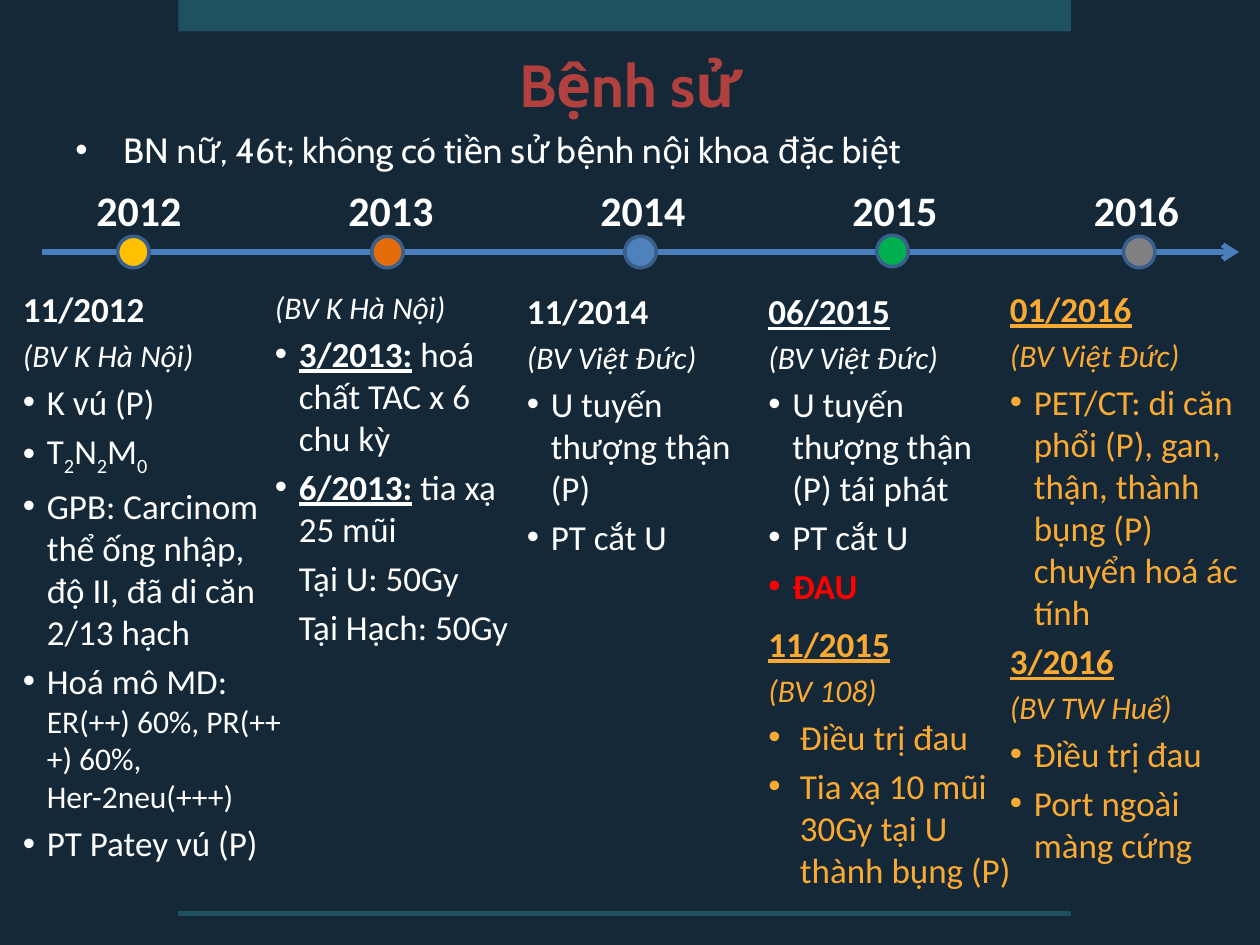
from dataclasses import dataclass

from lxml import etree
from pptx import Presentation
from pptx.dml.color import RGBColor
from pptx.enum.shapes import MSO_CONNECTOR, MSO_SHAPE
from pptx.enum.text import MSO_ANCHOR, PP_ALIGN
from pptx.oxml.ns import qn
from pptx.util import Inches, Pt

RECT, OVAL = MSO_SHAPE.RECTANGLE, MSO_SHAPE.OVAL
STRAIGHT = MSO_CONNECTOR.STRAIGHT
LEFT, CENTER = PP_ALIGN.LEFT, PP_ALIGN.CENTER
TOP, MIDDLE = MSO_ANCHOR.TOP, MSO_ANCHOR.MIDDLE

# The slide is a grid of 120 columns by 90 rows
COLUMNS, ROWS = 120, 90
SLIDE_W, SLIDE_H = Inches(10), Inches(7.5)

NAVY, TEAL, AXIS, RING = "142837", "1E5260", "4B7EBC", "3A5F8C"
WHITE, AMBER, RED, BRICK = "FFFFFF", "FAAA32", "FF0000", "B0413E"
BODY_FONT, HEAD_FONT = "Calibri", "Cabin"
HANG = 0.19


@dataclass(frozen=True)
class Run:
    text: str
    size: float = 20
    bold: bool = False
    italic: bool = False
    underline: bool = False
    color: str = ""
    subscript: bool = False


@dataclass(frozen=True)
class Para:
    runs: tuple[Run, ...]
    indent: float = 0
    bullet: bool = False


@dataclass(frozen=True)
class Box:
    left: float
    top: float
    width: float
    height: float


@dataclass(frozen=True)
class Year:
    label: str
    label_left: float
    dot_left: float
    dot_top: float
    color: str


@dataclass(frozen=True)
class Event:
    box: Box
    paras: tuple[Para, ...]
    color: str = WHITE


def date(text: str, underline: bool = True) -> Para:
    return Para((Run(text, bold=True, underline=underline),))


def hospital(name: str) -> Para:
    return Para((Run(f"({name})", size=18, italic=True),))


def item(*parts: str | Run, indent: float = HANG, bullet: bool = True) -> Para:
    runs = tuple(Run(p) if isinstance(p, str) else p for p in parts)
    return Para(runs, indent, bullet)


def due(text: str) -> Run:
    return Run(text, bold=True, underline=True)


def sub(text: str) -> Run:
    return Run(text, subscript=True)


YEARS = (
    Year("2012", 8, 11.2, 22.5, "FFC000"),
    Year("2013", 32, 35.4, 22.5, "E46C0A"),
    Year("2014", 56, 59.5, 22.5, "4F81BD"),
    Year("2015", 80, 83.5, 22.4, "00B050"),
    Year("2016", 103, 107, 22.5, "808080"),
)

EVENTS = (
    Event(Box(1, 26.8, 27, 68.3), (
        date("11/2012", underline=False),
        hospital("BV K Hà Nội"),
        item("K vú (P)"),
        item("T", sub("2"), "N", sub("2"), "M", sub("0")),
        item("GPB: Carcinom thể ống nhập, độ II, đã di căn 2/13 hạch"),
        item("Hoá mô MD: ", Run("ER(++) 60%, PR(+++) 60%, Her-2neu(+++)", size=18)),
        item("PT Patey vú (P)"),
    )),
    Event(Box(25, 26.8, 26, 68.3), (
        hospital("BV K Hà Nội"),
        item(due("3/2013:"), " hoá chất TAC x 6 chu kỳ"),
        item(due("6/2013:"), " tia xạ 25 mũi"),
        item("Tại U: 50Gy", bullet=False),
        item("Tại Hạch: 50Gy", bullet=False),
    )),
    Event(Box(49, 27, 25, 68.3), (
        date("11/2014", underline=False),
        hospital("BV Việt Đức"),
        item("U tuyến thượng thận (P)"),
        item("PT cắt U"),
    )),
    Event(Box(72, 27, 26, 34.2), (
        date("06/2015"),
        hospital("BV Việt Đức"),
        item("U tuyến thượng thận (P) tái phát"),
        item("PT cắt U"),
        item(Run("ĐAU", bold=True, color=RED)),
    )),
    Event(Box(95, 26.8, 26, 68.3), (
        date("01/2016"),
        hospital("BV Việt Đức"),
        item("PET/CT: di căn phổi (P), gan, thận, thành bụng (P) chuyển hoá ác tính"),
        date("3/2016"),
        hospital("BV TW Huế"),
        item("Điều trị đau"),
        item("Port ngoài màng cứng"),
    ), AMBER),
    Event(Box(72, 58.7, 26, 29.3), (
        date("11/2015"),
        hospital("BV 108"),
        item("Điều trị đau", indent=0.25),
        item("Tia xạ 10 mũi 30Gy tại U thành bụng (P)", indent=0.25),
    ), AMBER),
)


def rgb(value: str) -> RGBColor:
    return RGBColor.from_string(value)


def x(column: float) -> int:
    return round(SLIDE_W * column / COLUMNS)


def y(row: float) -> int:
    return round(SLIDE_H * row / ROWS)


def place(box: Box) -> tuple[int, int, int, int]:
    return x(box.left), y(box.top), x(box.width), y(box.height)


def add_figure(slide, kind, box: Box, fill: str, outline: str = "") -> None:
    figure = slide.shapes.add_shape(kind, *place(box))
    figure.shadow.inherit = False
    figure.fill.solid()
    figure.fill.fore_color.rgb = rgb(fill)
    if outline:
        figure.line.color.rgb = rgb(outline)
        figure.line.width = Pt(2)
    else:
        figure.line.fill.background()


def add_rule(slide, start: float, end: float, row: float, color: str, arrow: bool = False) -> None:
    rule = slide.shapes.add_connector(STRAIGHT, x(start), y(row), x(end), y(row))
    rule.line.color.rgb = rgb(color)
    rule.line.width = Pt(3)
    if arrow:
        etree.SubElement(rule.line._get_or_add_ln(), qn("a:tailEnd"), type="arrow")
    etree.SubElement(rule._element.spPr, qn("a:effectLst"))


def add_text(slide, box: Box, paras: tuple[Para, ...], color: str = WHITE,
             font: str = BODY_FONT, align=LEFT, anchor=TOP) -> None:
    frame = slide.shapes.add_textbox(*place(box)).text_frame
    frame.word_wrap = True
    frame.vertical_anchor = anchor
    for index, para in enumerate(paras):
        line = frame.paragraphs[0] if index == 0 else frame.add_paragraph()
        line.alignment = align
        line.space_before = Pt(0.2 * para.runs[0].size if index else 0)
        props = line._p.get_or_add_pPr()
        props.set("marL", str(Inches(para.indent)))
        if para.bullet:
            props.set("indent", str(-Inches(para.indent)))
            etree.SubElement(props, qn("a:buFont"), typeface="Arial")
            etree.SubElement(props, qn("a:buChar"), char="•")
        for part in para.runs:
            run = line.add_run()
            run.text = part.text
            run.font.name = font
            run.font.size = Pt(part.size)
            run.font.bold = part.bold
            run.font.italic = part.italic
            run.font.underline = part.underline
            run.font.color.rgb = rgb(part.color or color)
            if part.subscript:
                run._r.get_or_add_rPr().set("baseline", "-25000")


def main() -> None:
    deck = Presentation()
    deck.slide_width, deck.slide_height = SLIDE_W, SLIDE_H
    slide = deck.slides.add_slide(deck.slide_layouts[6])
    slide.background.fill.solid()
    slide.background.fill.fore_color.rgb = rgb(NAVY)

    # Frame bands and time axis
    add_figure(slide, RECT, Box(17, 0, 85, 3), TEAL)
    add_rule(slide, 17, 102, 87, TEAL)
    add_rule(slide, 4, 118, 24, AXIS, arrow=True)

    # Years on the axis
    for year in YEARS:
        add_figure(slide, OVAL, Box(year.dot_left, year.dot_top, 3, 3), year.color, RING)
        add_text(slide, Box(year.label_left, 17, 18, 9), (Para((Run(year.label, 24, bold=True),)),))

    # Events below the axis
    for event in EVENTS:
        add_text(slide, event.box, event.paras, event.color)

    # Title and patient summary
    add_text(slide, Box(6, 3, 108, 10), (Para((Run("Bệnh sử", 34, bold=True),)),),
             BRICK, HEAD_FONT, CENTER, MIDDLE)
    add_text(slide, Box(6, 11.6, 108, 5.4),
             (item("BN nữ, 46t; không có tiền sử bệnh nội khoa đặc biệt", indent=0.38),),
             font=HEAD_FONT)
    deck.save("out.pptx")


if __name__ == "__main__":
    main()
